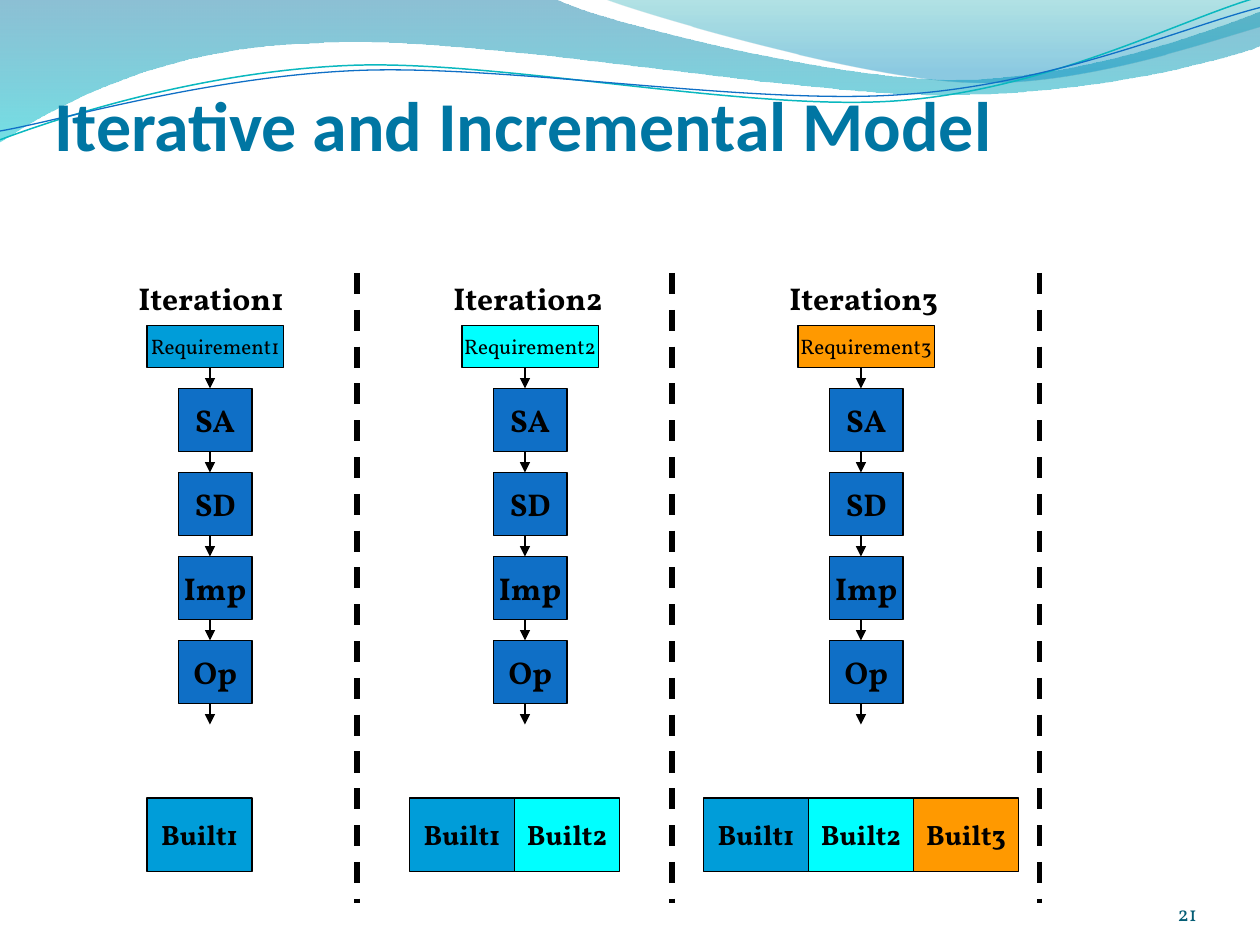
from pptx import Presentation
from pptx.dml.color import RGBColor
from pptx.enum.dml import MSO_LINE
from pptx.enum.shapes import MSO_CONNECTOR, MSO_SHAPE
from pptx.enum.text import MSO_ANCHOR, MSO_AUTO_SIZE, PP_ALIGN
from pptx.oxml.ns import qn
from pptx.util import Inches, Pt
from lxml.etree import SubElement

THEME = {
    "ink": "000000", "title": "0076A3", "page": "045D75", "stage": "0F6FC6",
    "parts": ["009DD9", "00FFFF", "FF9900"],
    "head": "Calibri", "body": "Vollkorn",
    "size": {"title": 40, "label": 18, "stage": 18, "built": 16, "small": 12},
    "thin": 0.75, "thick": 3,
}

TITLE = "Iterative and Incremental Model"
PAGE = "21"
STAGES = ["SA", "SD", "Imp", "Op"]
COLUMNS = [
    {"left": 14, "built": 14, "rule": 34},
    {"left": 44, "built": 39, "rule": 64},
    {"left": 76, "built": 67, "rule": 99},
]
UNIT = Inches(1) / 12
PITCH = 8

BANDS = [
    ([[(0, 0)], [(4.4, -0.01)],
      [(4.76, 0.17), (6.64, 0.63), (7.58, 0.63)],
      [(8.53, 0.63), (9.58, 0.26), (10, 0.09)], [(10.01, 0.36)],
      [(9.83, 0.44), (8.7, 0.76), (7.46, 0.75)],
      [(6.22, 0.75), (3.82, 0.28), (2.57, 0.34)],
      [(1.29, 0.36), (0.46, 0.83), (-0.01, 1.13)], [(0, 0)]],
     [(0, "0074A1", 45), (1, "00C6CF", 55)]),
    ([[(4.79, -0.01)],
      [(5.09, 0.11), (6.82, 0.62), (7.69, 0.65)],
      [(8.56, 0.69), (9.61, 0.32), (10, 0.21)], [(10, 0)], [(4.79, -0.01)]],
     [(0, "00A1A9", 30), (0.8, "008BBF", 45)]),
]
WAVES = [
    ([[(0, 1.11)],
      [(0.48, 0.93), (1.58, 0.57), (2.77, 0.52)],
      [(3.95, 0.47), (5.93, 0.89), (7.13, 0.8)],
      [(8.33, 0.71), (9.38, 0.15), (9.98, -0.02)]], "0AB8BF", 0.85),
    ([[(0, 1.04)],
      [(0.47, 0.96), (1.64, 0.61), (2.83, 0.56)],
      [(4.03, 0.51), (5.97, 0.84), (7.17, 0.75)],
      [(8.36, 0.67), (9.41, 0.21), (10, 0.06)]], "0F6FC6", 0.75),
]


def apply(item, vals):
    for key, val in vals.items():
        setattr(item, key, val)


def tint(code):
    return RGBColor.from_string(code)


def grid(*spot):
    return [round(n * UNIT) for n in spot]


def stroke(line, code, width):
    line.color.rgb = tint(code)
    line.width = Pt(width)


def outline(shapes, route, close):
    dots = [(round(x * 100), round(y * 100)) for leg in route for x, y in leg]
    pen = shapes.build_freeform(*dots[0], scale=Inches(1) / 100)
    pen.add_line_segments(dots[1:], close=close)
    shape = pen.convert_to_shape()
    shape.shadow.inherit = False
    nodes = iter(list(shape._element.iter(qn("a:lnTo"))))
    for leg in route[1:]:
        curve, *rest = [next(nodes) for _ in leg]
        if rest:
            curve.tag = qn("a:cubicBezTo")
        for node in rest:
            curve.append(node[0])
            node.getparent().remove(node)
    return shape


def band(shapes, route, stops):
    shape = outline(shapes, route, True)
    shape.line.fill.background()
    shape.fill.gradient()
    shape.fill.gradient_angle = 270
    for stop, (place, code, _) in zip(shape.fill.gradient_stops, stops):
        stop.color.rgb = tint(code)
        stop.position = place
    for node, (_, _, alpha) in zip(shape._element.iter(qn("a:srgbClr")), stops):
        SubElement(node, qn("a:alpha")).set("val", str(alpha * 1000))


def wave(shapes, route, code, width):
    shape = outline(shapes, route, False)
    shape.fill.background()
    stroke(shape.line, code, width)


def write(shape, words, size, code=THEME["ink"], face=THEME["body"], bold=True,
          align=PP_ALIGN.LEFT, **frame):
    apply(shape.text_frame, frame)
    para = shape.text_frame.paragraphs[0]
    para.alignment = align
    run = para.add_run()
    run.text = words
    apply(run.font, {"name": face, "size": Pt(THEME["size"][size]), "bold": bold})
    run.font.color.rgb = tint(code)


def label(shapes, spot, words, size, **form):
    write(shapes.add_textbox(*spot), words, size, **form)


def box(shapes, spot, words, size, fill, bold=True):
    shape = shapes.add_shape(MSO_SHAPE.RECTANGLE, *grid(*spot))
    shape.shadow.inherit = False
    shape.fill.solid()
    shape.fill.fore_color.rgb = tint(fill)
    stroke(shape.line, THEME["ink"], THEME["thin"])
    write(shape, words, size, bold=bold, align=PP_ALIGN.CENTER,
          word_wrap=False, vertical_anchor=MSO_ANCHOR.MIDDLE)


def link(shapes, x, top, end, width):
    line = shapes.add_connector(MSO_CONNECTOR.STRAIGHT, *grid(x, top, x, end))
    stroke(line.line, THEME["ink"], width)
    SubElement(line._element.spPr, qn("a:effectLst"))
    return line.line


def arrow(shapes, x, top):
    line = link(shapes, x, top, top + 2, THEME["thin"])
    SubElement(line._get_or_add_ln(), qn("a:tailEnd")).set("type", "triangle")


def column(shapes, num, left, built, rule):
    tone = THEME["parts"][num - 1]
    box(shapes, (left, 31, 13, 4), f"Requirement{num}", "small", tone, False)
    for row, name in enumerate(STAGES):
        box(shapes, (left + 3, 37 + row * PITCH, 7, 6), name, "stage", THEME["stage"])
    for row in range(len(STAGES) + 1):
        arrow(shapes, left + 6, 35 + row * PITCH)
    spot = (*grid(left - 2, 26), Inches(1.49), Inches(0.4))
    label(shapes, spot, f"Iteration{num}", "label", word_wrap=False,
          auto_size=MSO_AUTO_SIZE.SHAPE_TO_FIT_TEXT)
    link(shapes, rule, 26, 86, THEME["thick"]).dash_style = MSO_LINE.DASH
    for part, fill in enumerate(THEME["parts"][:num]):
        box(shapes, (built + part * 10, 76, 10, 7), f"Built{part + 1}", "built", fill)


def main():
    deck = Presentation()
    apply(deck, {"slide_width": Inches(10), "slide_height": Inches(7.5)})
    shapes = deck.slides.add_slide(deck.slide_layouts[6]).shapes
    for item in BANDS:
        band(shapes, *item)
    for item in WAVES:
        wave(shapes, *item)
    base = {"word_wrap": True, "vertical_anchor": MSO_ANCHOR.BOTTOM,
            "margin_left": 0, "margin_right": 0, "margin_bottom": 0}
    label(shapes, map(Inches, (0.43, 0.21, 9.08, 1.1)), TITLE, "title",
          code=THEME["title"], face=THEME["head"], margin_top=Inches(0.05), **base)
    for num, spots in enumerate(COLUMNS, 1):
        column(shapes, num, **spots)
    label(shapes, map(Inches, (8.67, 6.95, 0.83, 0.4)), PAGE, "small",
          code=THEME["page"], bold=False, align=PP_ALIGN.RIGHT, margin_top=0, **base)
    deck.save("out.pptx")


if __name__ == "__main__":
    main()
